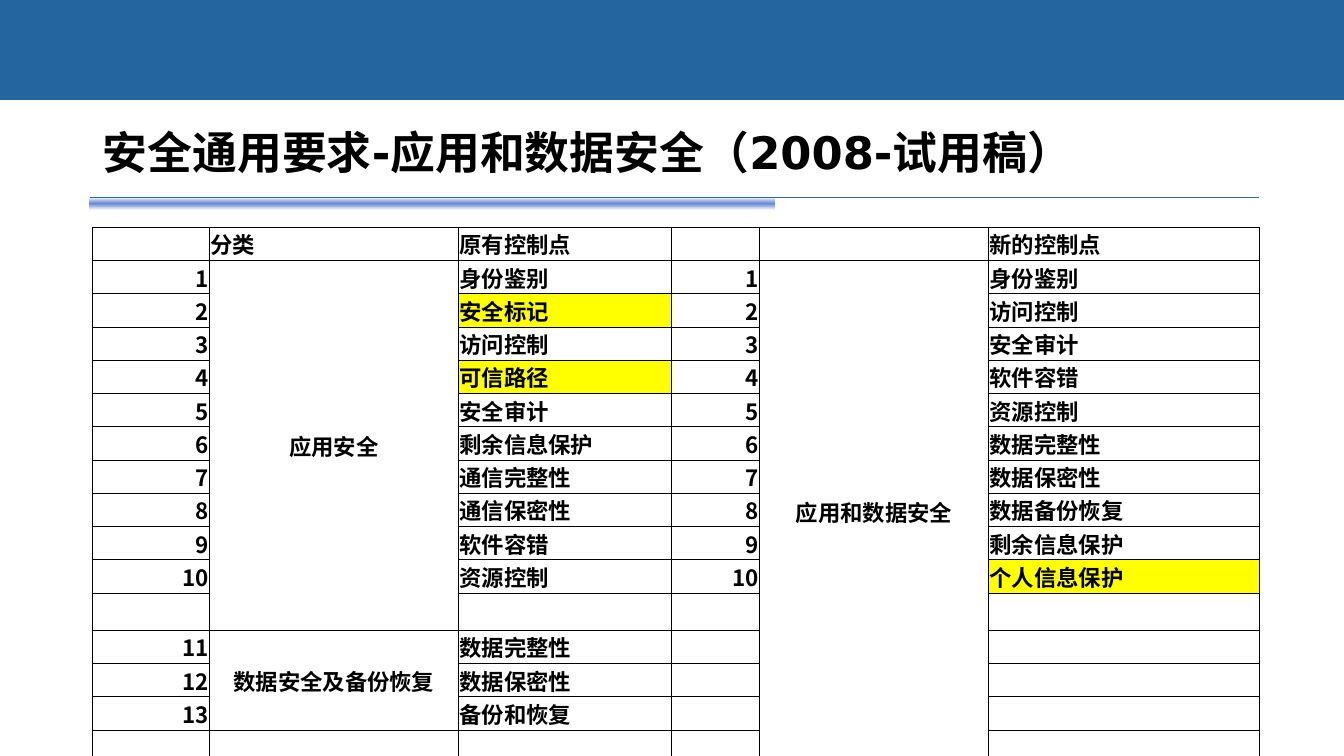
import pptx
import pptx.util
import pptx.dml.color
import pptx.enum.shapes
import pptx.enum.text
import pptx.oxml
import pptx.oxml.ns
from lxml import etree

Pt = pptx.util.Pt
RGB = pptx.dml.color.RGBColor.from_string
qn = pptx.oxml.ns.qn
ALIGN = pptx.enum.text.PP_ALIGN
ANCHOR = pptx.enum.text.MSO_ANCHOR
NS = pptx.oxml.ns.nsdecls("a")
COLORS = {"band": "25659F", "rule": "336699", "glow_edge": "5781D5",
          "glow_core": "6387D6", "ink": "000000", "highlight": "FFFF00"}


def write(frame, text, size=16, font="Noto Sans CJK SC", align=ALIGN.LEFT):
    paragraph = frame.paragraphs[0]
    paragraph.alignment = align
    run = paragraph.add_run()
    run.text = text
    run.font.size = Pt(size)
    run.font.bold = True
    run.font.name = font
    run.font.color.rgb = RGB(COLORS["ink"])
    etree.SubElement(run.font._element, qn("a:ea")).set("typeface", font)


deck = pptx.Presentation()
deck.slide_width, deck.slide_height = Pt(960), Pt(540)
slide = deck.slides.add_slide(deck.slide_layouts[5])
shapes = slide.shapes

glow = shapes.add_shape(pptx.enum.shapes.MSO_SHAPE.RECTANGLE, Pt(64), Pt(141), Pt(489), Pt(8.7))
glow.shadow.inherit = False
glow.line.fill.background()
stops = [(0, "glow_edge", 0), (50, "glow_core", 100), (100, "glow_edge", 0)]
stop_xml = "".join(
    f'<a:gs pos="{pos * 1000}"><a:srgbClr val="{COLORS[name]}">'
    f'<a:alpha val="{alpha * 1000}"/></a:srgbClr></a:gs>' for pos, name, alpha in stops)
glow._element.spPr.find(qn("a:prstGeom")).addnext(pptx.oxml.parse_xml(
    f'<a:gradFill {NS}><a:gsLst>{stop_xml}</a:gsLst><a:lin ang="5400000" scaled="0"/></a:gradFill>'))

rule = shapes.add_connector(pptx.enum.shapes.MSO_CONNECTOR.STRAIGHT, Pt(64), Pt(141), Pt(899.3), Pt(141))
rule.line.color.rgb = RGB(COLORS["rule"])
rule.line.width = Pt(0.75)
etree.SubElement(rule._element.spPr, qn("a:effectLst"))

band = shapes.add_shape(pptx.enum.shapes.MSO_SHAPE.RECTANGLE, 0, 0, Pt(960), Pt(71.3))
band.shadow.inherit = False
band.fill.solid()
band.fill.fore_color.rgb = RGB(COLORS["band"])
band.line.fill.background()

title = shapes.title
shapes._spTree.append(title._element)
title.left, title.top, title.width, title.height = Pt(66.2), Pt(31.7), Pt(735), Pt(95.8)
heading = title.text_frame
heading.word_wrap = True
heading.auto_size = pptx.enum.text.MSO_AUTO_SIZE.NONE
heading.vertical_anchor = ANCHOR.BOTTOM
heading.margin_left = heading.margin_right = Pt(7.2)
heading.margin_top = heading.margin_bottom = 0
write(heading, "安全通用要求-应用和数据安全（2008-试用稿）", size=32, font="DejaVu Sans")

old_points = ["身份鉴别", "安全标记", "访问控制", "可信路径", "安全审计", "剩余信息保护", "通信完整性",
              "通信保密性", "软件容错", "资源控制", "", "数据完整性", "数据保密性", "备份和恢复"]
new_points = ["身份鉴别", "访问控制", "安全审计", "软件容错", "资源控制", "数据完整性",
              "数据保密性", "数据备份恢复", "剩余信息保护", "个人信息保护"]
entries = {(0, 1): "分类", (0, 2): "原有控制点", (0, 5): "新的控制点"}
for number_column, point_column, points in [(0, 2, old_points), (3, 5, new_points)]:
    number = 0
    for row, point in enumerate(points, start=1):
        if point:
            number += 1
            entries[row, number_column] = str(number)
            entries[row, point_column] = point
categories = [(1, 11, 1, "应用安全"), (12, 14, 1, "数据安全及备份恢复"), (1, 15, 4, "应用和数据安全")]
for first, last, column, category in categories:
    entries[first, column] = category
highlighted = {"安全标记", "可信路径", "个人信息保护"}

widths = [83.5, 177.8, 151.9, 63.4, 163.4, 193.7]
heights = [20.16] * 16
heights[11] = 26.6
table = shapes.add_table(16, 6, Pt(66.2), Pt(162.2), Pt(sum(widths)), Pt(sum(heights))).table
table.first_row = table.horz_banding = False
for column, width in zip(table.columns, widths):
    column.width = Pt(width)
for row, height in zip(table.rows, heights):
    row.height = Pt(height)

for row in range(16):
    for column in range(6):
        cell = table.cell(row, column)
        cell.margin_left = cell.margin_right = cell.margin_top = Pt(0.7)
        cell.margin_bottom = 0
        cell.vertical_anchor = ANCHOR.MIDDLE
        text = entries.get((row, column), "")
        if text in highlighted:
            cell.fill.solid()
            cell.fill.fore_color.rgb = RGB(COLORS["highlight"])
        else:
            cell.fill.background()
        if text:
            align = ALIGN.LEFT
            if column in (0, 3):
                align = ALIGN.RIGHT
            elif column in (1, 4) and row:
                align = ALIGN.CENTER
            write(cell.text_frame, text, align=align)
        for position, side in enumerate(("lnL", "lnR", "lnT", "lnB")):
            cell._tc.tcPr.insert(position, pptx.oxml.parse_xml(
                f'<a:{side} {NS} w="6350"><a:solidFill><a:srgbClr val="{COLORS["ink"]}"/>'
                f'</a:solidFill></a:{side}>'))

for first, last, column, category in categories:
    table.cell(first, column).merge(table.cell(last, column))

deck.save("out.pptx")
